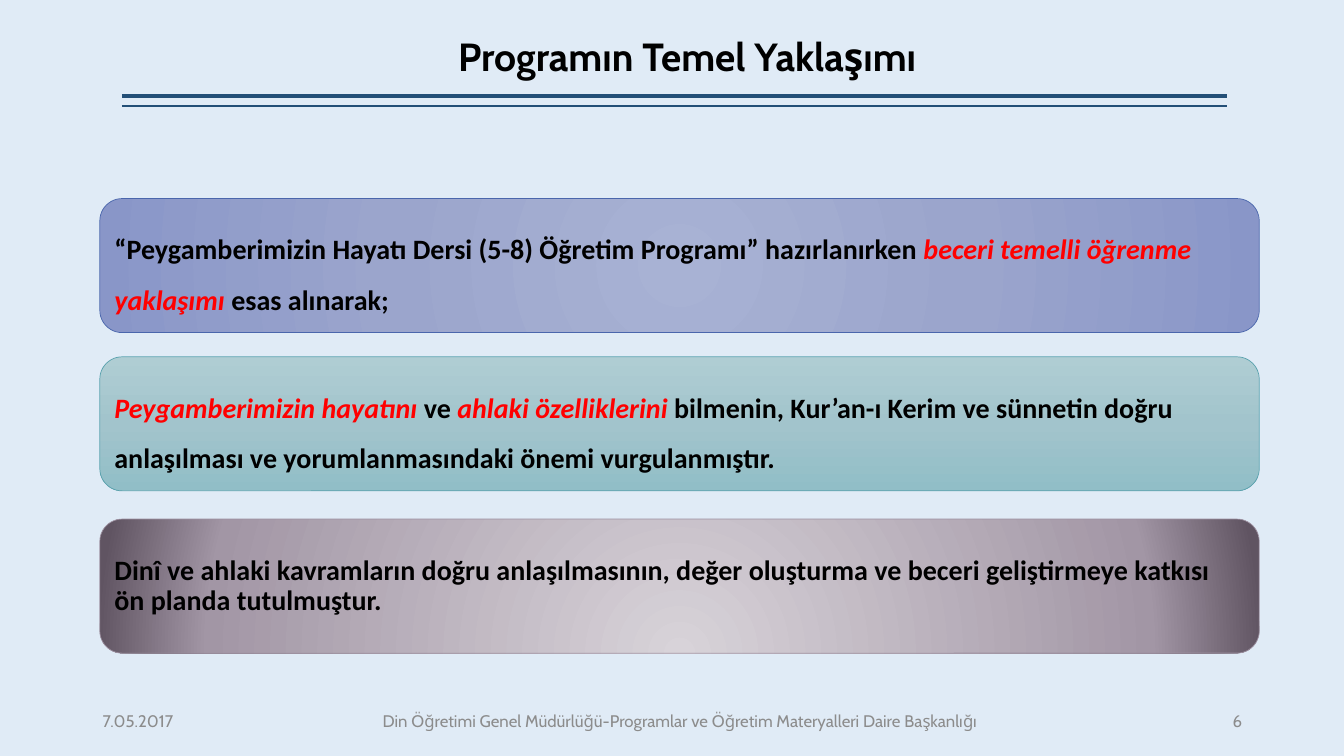
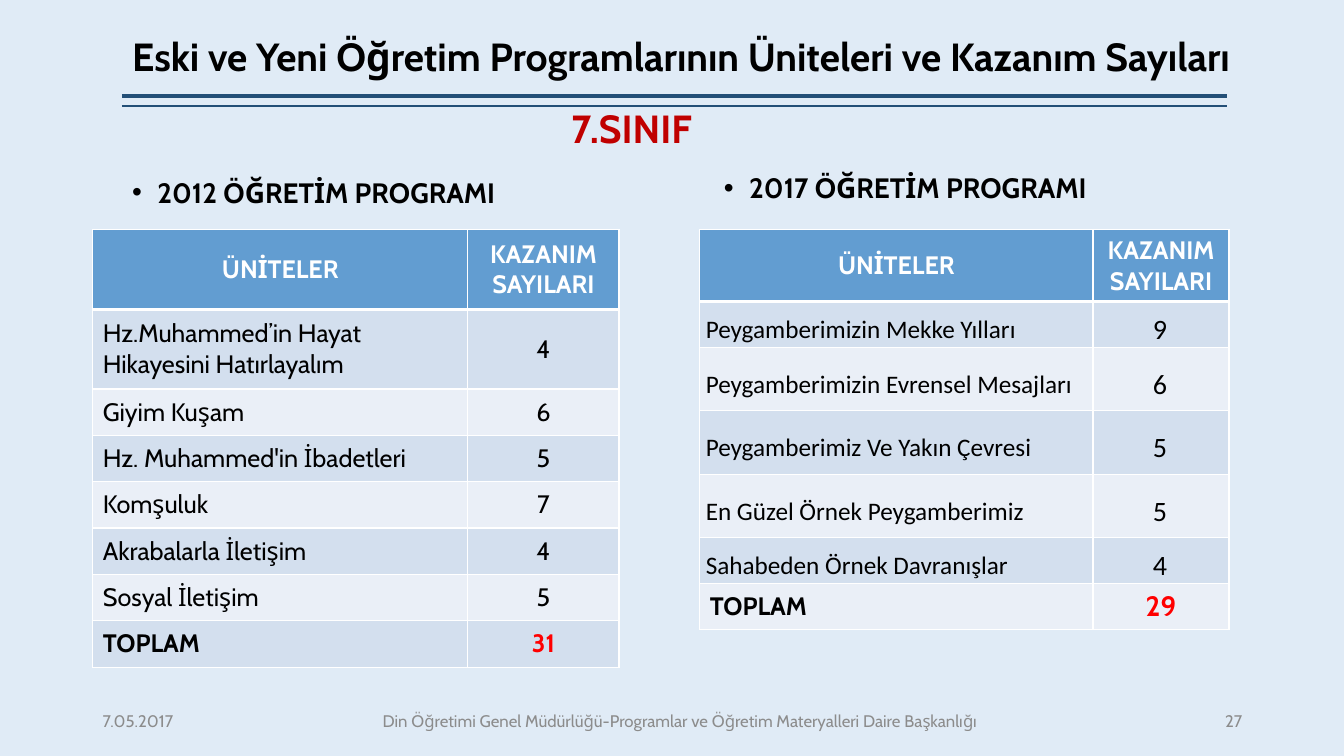
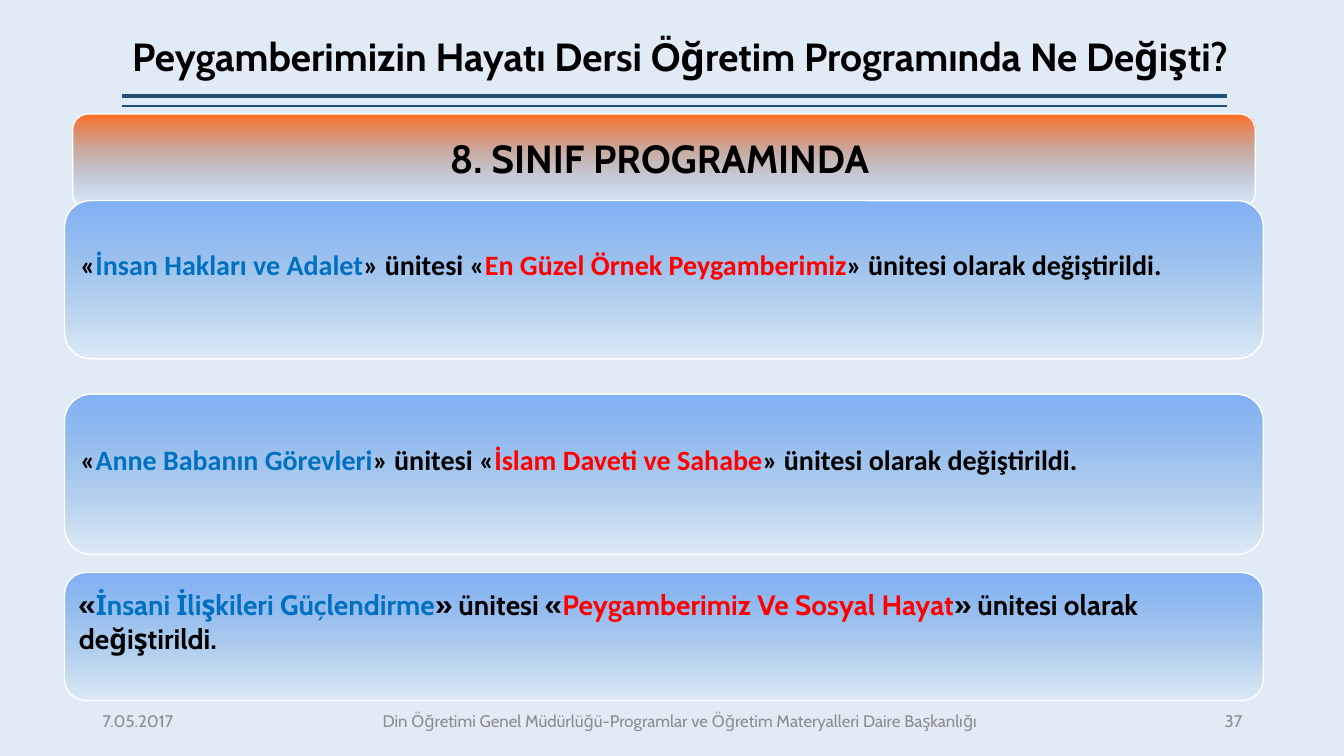
from dataclasses import dataclass

from pptx import Presentation
from pptx.dml.color import RGBColor
from pptx.enum.shapes import MSO_CONNECTOR as Connector, MSO_SHAPE as Shape
from pptx.enum.text import MSO_ANCHOR as Anchor, MSO_AUTO_SIZE as AutoSize, PP_ALIGN as Align
from pptx.oxml import parse_xml
from pptx.oxml.ns import nsdecls
from pptx.util import Inches, Pt


@dataclass(frozen=True)
class Theme:
    # Colours
    background: str = "E0EBF6"
    rule: str = "234F77"
    text: str = "000000"
    muted: str = "8C8C8C"
    red: str = "FF0000"
    dark_red: str = "C00000"
    blue: str = "0070C0"
    white: str = "FFFFFF"
    header: str = "629DD1"
    bands: tuple = ("D3DFEE", "EAEFF7")
    # Fonts and type sizes
    heading_font: str = "Cabin"
    body_font: str = "Calibri"
    title_size: int = 28
    body_size: int = 20
    table_size: int = 18
    footer_size: int = 12


THEME = Theme()
DATE = "7.05.2017"
OFFICE = "Din Öğretimi Genel Müdürlüğü-Programlar ve Öğretim Materyalleri Daire Başkanlığı"
LINEAR = '<a:lin ang="5400000" scaled="0"/>'


def circular(left, top, right, bottom):
    return (f'<a:path path="circle"><a:fillToRect l="{left}000" t="{top}000" '
            f'r="{right}000" b="{bottom}000"/></a:path>')


def fading(colour):
    """Gradient stops from a solid colour to a clear blue."""
    return [(0, colour, 100), (100, "5C9DD7", 0)]


def assign(target, values):
    for name, value in values.items():
        setattr(target, name, value)


def rgb(colour):
    return RGBColor.from_string(colour)


class Deck:
    def __init__(self, theme):
        self.theme = theme
        self.prs = Presentation()
        assign(self.prs, {"slide_width": Inches(13.33), "slide_height": Inches(7.5)})
        backdrop = self.prs.slide_master.background.fill
        backdrop.solid()
        backdrop.fore_color.rgb = rgb(theme.background)
        self.slide = None

    def place(self, shape, box):
        assign(shape, dict(zip(("left", "top", "width", "height"), map(Inches, box))))

    def start(self, title, number, layout=5, align=Align.LEFT):
        """New slide with its title, double rule and footer."""
        t = self.theme
        self.slide = self.prs.slides.add_slide(self.prs.slide_layouts[layout])
        heading = self.slide.shapes.title
        self.place(heading, (1.21, 0.16, 11.21, 0.84))
        self.set_text(heading.text_frame, [(title, t.text)], t.title_size, align=align,
                      bold=True, spacing=0.9)
        for y, weight in ((0.95, 3), (1.05, 1)):
            self.rule(y, weight)
        for left, width, words, side in ((0.92, 1.25, DATE, Align.LEFT),
                                         (2.5, 8.49, OFFICE, Align.CENTER),
                                         (11.26, 1.16, str(number), Align.RIGHT)):
            self.label((left, 6.95, width, 0.4), words, t.muted, t.footer_size, side)

    def rule(self, y, weight):
        line = self.slide.shapes.add_connector(
            Connector.STRAIGHT, Inches(1.21), Inches(y), Inches(12.17), Inches(y))
        line.line.color.rgb = rgb(self.theme.rule)
        line.line.width = Pt(weight)
        line.element.spPr.append(parse_xml(f'<a:effectLst {nsdecls("a")}/>'))

    def set_text(self, frame, runs, size, font=None, align=Align.LEFT, bold=False,
                 spacing=1.0, anchor=Anchor.MIDDLE):
        """Fill the first paragraph with (text, colour[, italic]) runs."""
        assign(frame, {"word_wrap": True, "auto_size": AutoSize.NONE,
                       "vertical_anchor": anchor})
        paragraph = frame.paragraphs[0]
        assign(paragraph, {"alignment": align, "line_spacing": spacing,
                           "space_before": Pt(0)})
        for words, colour, *italic in runs:
            run = paragraph.add_run()
            run.text = words
            assign(run.font, {"name": font or self.theme.heading_font, "size": Pt(size),
                              "bold": bold, "italic": bool(italic)})
            run.font.color.rgb = rgb(colour)

    def label(self, box, words, colour, size, align, **style):
        text_box = self.slide.shapes.add_textbox(*map(Inches, box))
        self.set_text(text_box.text_frame, [(words, colour)], size, align=align, **style)

    def bullet(self, index, box, words, spacing):
        """One bulleted line in a body placeholder."""
        body = self.slide.placeholders[index]
        self.place(body, box)
        props = body.text_frame.paragraphs[0]._p.get_or_add_pPr()
        props.set("marL", str(Inches(0.25)))
        props.set("indent", str(-Inches(0.25)))
        props.append(parse_xml(f'<a:buFont {nsdecls("a")} typeface="Arial"/>'))
        props.append(parse_xml(f'<a:buChar {nsdecls("a")} char="•"/>'))
        self.set_text(body.text_frame, [(words, self.theme.text)], self.theme.body_size,
                      bold=True, spacing=spacing, anchor=Anchor.TOP)

    def panel(self, box, stops, outline, weight, runs, size=None, direction=LINEAR,
              inset=0.08, lift=0, **style):
        """Rounded gradient panel; lift raises the text by a deeper bottom margin."""
        panel = self.slide.shapes.add_shape(Shape.ROUNDED_RECTANGLE, *map(Inches, box))
        panel.shadow.inherit = False
        panel.line.color.rgb = rgb(outline)
        panel.line.width = Pt(weight)
        panel.fill.gradient()
        marks = "".join(
            f'<a:gs pos="{at}000"><a:srgbClr val="{colour}"><a:alpha val="{alpha}000"/>'
            f'</a:srgbClr></a:gs>' for at, colour, alpha in stops)
        props = panel.element.spPr
        gradient = parse_xml(f'<a:gradFill {nsdecls("a")} rotWithShape="1">'
                             f'<a:gsLst>{marks}</a:gsLst>{direction}</a:gradFill>')
        props.replace(props.find(gradient.tag), gradient)
        frame = panel.text_frame
        assign(frame, {f"margin_{side}": Inches(inset) for side in ("left", "top", "right")})
        frame.margin_bottom = Inches(inset + lift)
        self.set_text(frame, runs, size or self.theme.body_size, bold=True, **style)

    def borders(self, cell, top, bottom):
        props = cell._tc.get_or_add_tcPr()
        for at, (side, weight) in enumerate((("L", 1), ("R", 1), ("T", top), ("B", bottom))):
            props.insert(at, parse_xml(
                f'<a:ln{side} {nsdecls("a")} w="{Pt(weight)}"><a:solidFill>'
                f'<a:srgbClr val="{self.theme.white}"/></a:solidFill></a:ln{side}>'))

    def unit_table(self, left, columns, heights, units, total, total_size, unit_style=None,
                   count_style=None, margins=None):
        """Units and their counts, between a header row and a total row."""
        t = self.theme
        rows = [("ÜNİTELER", "KAZANIM SAYILARI"), *units, ("TOPLAM", total)]
        last = len(rows) - 1
        box = (left, 2.28, sum(columns), sum(heights))
        table = self.slide.shapes.add_table(len(rows), 2, *map(Inches, box)).table
        for column, width in zip(table.columns, columns):
            column.width = Inches(width)
        for r, (row, height) in enumerate(zip(rows, heights)):
            table.rows[r].height = Inches(height)
            for c, words in enumerate(row):
                cell = table.cell(r, c)
                cell.fill.solid()
                cell.fill.fore_color.rgb = rgb(t.bands[(r - 1) % 2] if r else t.header)
                self.borders(cell, top=3 if r == 1 else 1, bottom=1 if r else 3)
                style = {"size": t.table_size, "bold": r in (0, last),
                         "align": Align.CENTER if c or not r else Align.LEFT}
                colour = t.text if r else t.white
                if 0 < r < last:
                    style.update((count_style if c else unit_style) or {})
                    assign(cell, margins or {})
                elif r == last and c:
                    colour, style["size"] = t.red, total_size
                self.set_text(cell.text_frame, [(str(words), colour)], **style)
                cell.vertical_anchor = Anchor.MIDDLE


def approach_slide(deck):
    t = deck.theme
    deck.start("Programın Temel Yaklaşımı", 6, align=Align.CENTER)
    principles = [
        (1.97, "4A66AC", [(0, "A8B2D4", 100), (50, "9BA5CC", 100), (100, "8996C8", 100)],
         circular(50, 50, 50, 50), 1.5,
         [("“Peygamberimizin Hayatı Dersi (5-8) Öğretim Programı” hazırlanırken ", t.text),
          ("beceri temelli öğrenme yaklaşımı", t.red, True),
          (" esas alınarak;", t.text)]),
        (3.54, "5AA2AE", [(0, "AFCDD3", 100), (50, "A2C4CC", 100), (100, "91BEC7", 100)],
         LINEAR, 1.5,
         [("Peygamberimizin hayatını ", t.red, True), ("ve ", t.text),
          ("ahlaki özelliklerini ", t.red, True),
          ("bilmenin, Kur’an-ı Kerim ve sünnetin doğru anlaşılması ve "
           "yorumlanmasındaki önemi vurgulanmıştır.", t.text)]),
        (5.15, "9D90A0", [(0, "D8D3D9", 100), (81, "A296A5", 100), (100, "605462", 100)],
         circular(50, 130, 50, -30), 0.9,
         [("Dinî ve ahlaki kavramların doğru anlaşılmasının, değer oluşturma ve "
           "beceri geliştirmeye katkısı ön planda tutulmuştur.", t.text)]),
    ]
    for top, outline, stops, direction, spacing, runs in principles:
        deck.panel((0.99, top, 11.5, 1.33), stops, outline, 0.5, runs,
                   direction=direction, spacing=spacing, font=t.body_font)


def units_slide(deck):
    t = deck.theme
    deck.start("Eski ve Yeni Öğretim Programlarının Üniteleri ve Kazanım Sayıları", 27, layout=3)
    # The second pair of text areas of this layout is not needed
    deck.label((2.21, 0.99, 8.11, 0.57), "7.SINIF", t.dark_red, t.title_size,
               Align.CENTER, bold=True, anchor=Anchor.TOP)
    deck.bullet(1, (1.21, 1.69, 4.42, 0.7), "2012 ÖĞRETİM PROGRAMI", 1.0)
    deck.bullet(2, (7.08, 1.68, 4.42, 0.7), "2017 ÖĞRETİM PROGRAMI", 0.9)

    # 2012 programme
    deck.unit_table(0.92, (3.72, 1.5), [0.79] * 2 + [0.46] * 6, [
        ("Hz.Muhammed’in Hayat Hikayesini Hatırlayalım", 4),
        ("Giyim Kuşam", 6),
        ("Hz. Muhammed'in İbadetleri", 5),
        ("Komşuluk", 7),
        ("Akrabalarla İletişim", 4),
        ("Sosyal İletişim", 5),
    ], 31, t.table_size)

    # 2017 programme
    unit_style = {"font": t.body_font, "spacing": 1.07}
    deck.unit_table(6.94, (3.9, 1.35), [0.71, 0.44, 0.63, 0.63, 0.63, 0.44, 0.46], [
        ("Peygamberimizin Mekke Yılları", 9),
        ("Peygamberimizin Evrensel Mesajları", 6),
        ("Peygamberimiz Ve Yakın Çevresi", 5),
        ("En Güzel Örnek Peygamberimiz", 5),
        ("Sahabeden Örnek Davranışlar", 4),
    ], 29, t.body_size, unit_style, {**unit_style, "size": t.body_size},
        {"margin_left": Inches(0.06), "margin_top": Inches(0.09),
         "margin_right": Inches(0.08), "margin_bottom": Inches(0)})


def changes_slide(deck):
    t = deck.theme
    deck.start("Peygamberimizin Hayatı Dersi Öğretim Programında Ne Değişti?", 37)
    deck.panel((0.72, 1.13, 11.73, 0.94), fading("FF6E21"), t.white, 1,
               [("8. SINIF PROGRAMINDA ", t.text)], t.title_size, inset=0.12,
               align=Align.CENTER, spacing=0.9)
    renamed_units = [
        (1.99, 1.57, t.body_font, "İnsan Hakları ve Adalet", "En Güzel Örnek Peygamberimiz"),
        (3.91, 1.59, t.body_font, "Anne Babanın Görevleri", "İslam Daveti ve Sahabe"),
        (5.68, 1.27, t.heading_font, "İnsani İlişkileri Güçlendirme",
         "Peygamberimiz Ve Sosyal Hayat"),
    ]
    for top, height, font, old, new in renamed_units:
        deck.panel((0.64, top, 11.89, height), fading("81B0F6"), t.white, 1,
                   [("«", t.text), (old, t.blue), ("» ünitesi «", t.text), (new, t.red),
                    ("» ünitesi olarak değiştirildi.", t.text)], lift=0.3, font=font)


def main():
    deck = Deck(THEME)
    for build in (approach_slide, units_slide, changes_slide):
        build(deck)
    deck.prs.save("out.pptx")


if __name__ == "__main__":
    main()
